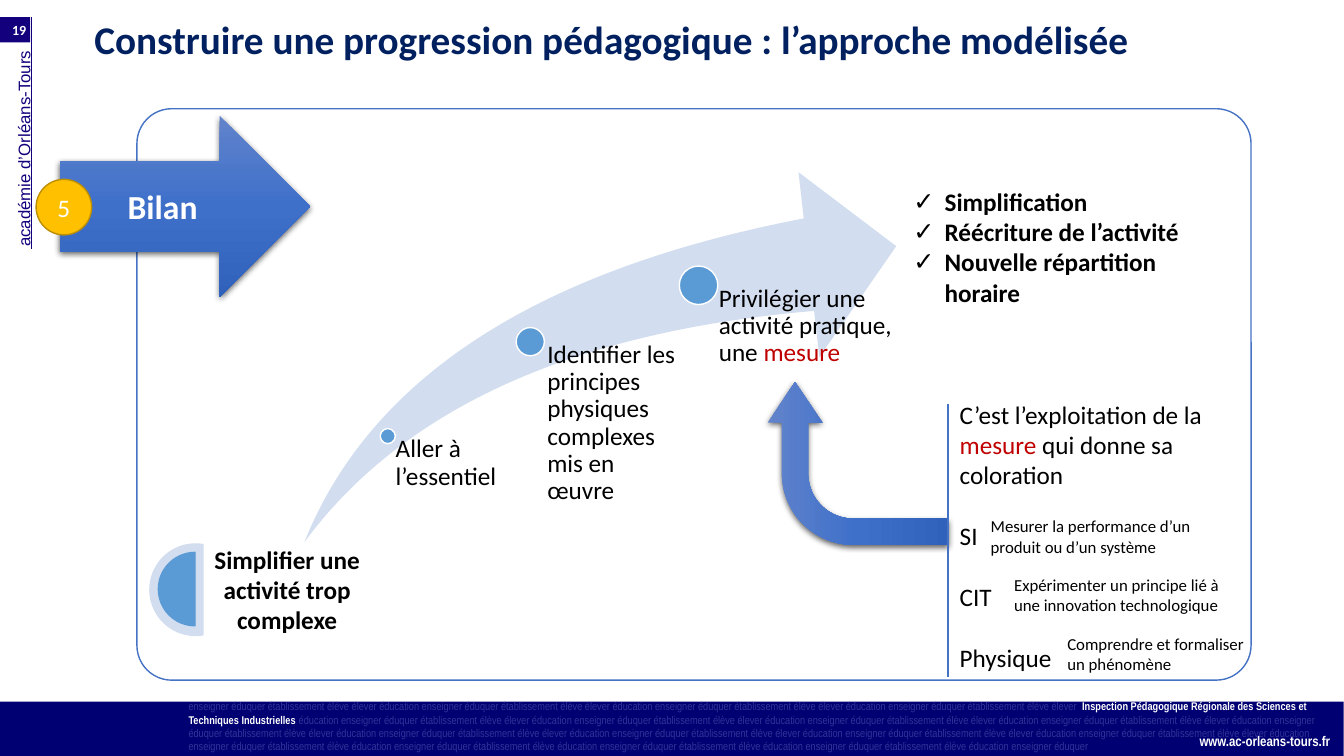
"""Build the slide that sums up the modelled approach to a teaching progression."""
from dataclasses import dataclass

from pptx import Presentation
from pptx import util as u
from pptx.dml.color import RGBColor
from pptx.enum import shapes, text
from pptx.oxml import parse_xml
from pptx.oxml.ns import nsdecls, qn

Kind = shapes.MSO_SHAPE
Align = text.PP_ALIGN


@dataclass(frozen=True)
class Theme:
    """Colours, fonts and type sizes of the slide."""
    navy: str = "000072"
    indigo: str = "13007C"
    faded: str = "333399"
    title: str = "002060"
    blue: str = "4472C4"
    dot: str = "5B9BD5"
    pale: str = "D2DEEF"
    gold: str = "FFC000"
    gold_edge: str = "BD8E00"
    red: str = "C00000"
    black: str = "000000"
    white: str = "FFFFFF"
    gradient: tuple = ((0, "6183CB"), (50, "3E70CA"), (100, "3062BB"))
    body_font: str = "Calibri"
    narrow_font: str = "Arial Narrow"
    side_font: str = "Arial"
    title_size: int = 28
    arrow_size: int = 24
    body_size: int = 18
    note_size: int = 12
    small_size: int = 10
    footer_size: int = 8


def write(shape, *paragraphs, size=18, color="000000", font="Calibri", bold=False,
          align=Align.LEFT, accent=None, accent_bold=False, spacing=None,
          before=0, bullet=None):
    """Write paragraphs in a shape; words between asterisks take the accent colour."""
    frame = shape.text_frame
    for index, content in enumerate(paragraphs):
        paragraph = frame.add_paragraph() if index else frame.paragraphs[0]
        if bullet:
            properties = paragraph._p.get_or_add_pPr()
            properties.set("marL", str(u.Cm(0.79)))
            properties.set("indent", str(-u.Cm(0.79)))
            properties.append(parse_xml(f'<a:buFont {nsdecls("a")} typeface="Arial"/>'))
            properties.append(parse_xml(f'<a:buChar {nsdecls("a")} char="{bullet}"/>'))
        paragraph.alignment = align
        if spacing:
            paragraph.line_spacing = spacing
        if index and before:
            paragraph.space_before = u.Pt(before)
        for part, words in enumerate(content.split("*")):
            accented = part % 2 == 1
            for row, line in enumerate(words.split("\n")):
                if row:
                    paragraph.add_line_break()
                if not line:
                    continue
                run = paragraph.add_run()
                run.text = line
                run.font.name = font
                run.font.size = u.Pt(size)
                run.font.bold = accent_bold if accented else bold
                run.font.color.rgb = RGBColor.from_string(accent if accented else color)


class SlideBuilder:
    """Hold the theme and the current slide, and draw each kind of element."""

    def __init__(self, slide, theme):
        self.slide = slide
        self.theme = theme

    def shape(self, kind, box, fill=None, line=None, adjustments=(), rotation=0):
        """Add a preset shape with a plain fill and an optional thin outline."""
        shape = self.slide.shapes.add_shape(kind, *map(u.Cm, box))
        shape.shadow.inherit = False
        shape.rotation = rotation
        for index, value in enumerate(adjustments):
            shape.adjustments[index] = value
        if fill:
            shape.fill.solid()
            shape.fill.fore_color.rgb = RGBColor.from_string(fill)
        else:
            shape.fill.background()
        if line:
            shape.line.color.rgb = RGBColor.from_string(line)
            shape.line.width = u.Pt(1)
        else:
            shape.line.fill.background()
        return shape

    def raised_arrow(self, kind, box, **options):
        """Add an arrow with the theme gradient and a soft shadow."""
        shape = self.shape(kind, box, fill=self.theme.blue, **options)
        stops = "".join(f'<a:gs pos="{place * 1000}"><a:srgbClr val="{color}"/></a:gs>'
                        for place, color in self.theme.gradient)
        properties = shape._element.spPr
        properties.replace(properties.find(qn("a:solidFill")), parse_xml(
            f'<a:gradFill {nsdecls("a")} rotWithShape="1"><a:gsLst>{stops}</a:gsLst>'
            '<a:lin ang="5400000" scaled="0"/></a:gradFill>'))
        properties.find(qn("a:effectLst")).append(parse_xml(
            f'<a:outerShdw {nsdecls("a")} blurRad="{u.Pt(4.5)}" dist="{u.Pt(1.5)}" '
            'dir="5400000" algn="ctr" rotWithShape="0"><a:srgbClr val="000000">'
            '<a:alpha val="63000"/></a:srgbClr></a:outerShdw>'))
        return shape

    def label(self, box, *paragraphs, wrap=True, grow=True, insets=None, rotation=0, **style):
        """Add a text box."""
        shape = self.slide.shapes.add_textbox(*map(u.Cm, box))
        shape.rotation = rotation
        frame = shape.text_frame
        frame.word_wrap = wrap
        if grow:
            frame.auto_size = text.MSO_AUTO_SIZE.SHAPE_TO_FIT_TEXT
        if insets:
            (frame.margin_left, frame.margin_top,
             frame.margin_right, frame.margin_bottom) = map(u.Cm, insets)
        write(shape, *paragraphs, **style)
        return shape

    def vertical_line(self, x, top, bottom, color, width):
        """Add a straight vertical line."""
        line = self.slide.shapes.add_connector(
            shapes.MSO_CONNECTOR.STRAIGHT, u.Cm(x), u.Cm(top), u.Cm(x), u.Cm(bottom))
        line.line.color.rgb = RGBColor.from_string(color)
        line.line.width = u.Pt(width)
        line._element.spPr.append(parse_xml(f'<a:effectLst {nsdecls("a")}/>'))


def draw_frame(builder):
    """Draw the footer band, page number and side label."""
    theme = builder.theme
    short = "enseigner éduquer établissement élève "
    cycle = short + "élever éducation "
    builder.shape(Kind.RECTANGLE, (-0.64, 17.68, 34.49, 1.4), theme.navy)
    builder.label(
        (4.5, 17.5, 29.39, 1.63),
        cycle * 3 + short + "élever "
        "*Inspection Pédagogique Régionale des Sciences et Techniques Industrielles *"
        "éducation " + cycle * 9 + (short + "éducation ") * 4 + "enseigner éduquer",
        size=theme.footer_size, color=theme.faded, font=theme.narrow_font,
        accent=theme.white, accent_bold=True)
    builder.label((28.4, 18.34, 5.36, 0.69), "www.ac-orleans-tours.fr", size=theme.small_size,
                  color=theme.white, font=theme.narrow_font, bold=True, align=Align.RIGHT)
    page = builder.shape(Kind.RECTANGLE, (-0.43, 0.43, 1.19, 0.64), theme.indigo)
    page.text_frame.word_wrap = False
    page.text_frame.margin_left = page.text_frame.margin_right = u.Cm(0.1)
    write(page, "19", size=theme.small_size, color=theme.white, bold=True, align=Align.RIGHT)
    builder.vertical_line(0.79, 0.43, 6.27, theme.indigo, 0.75)
    builder.label((-2.69, 3.94, 6.58, 0.76), "académie d’Orléans-Tours", rotation=270,
                  size=theme.note_size, color=theme.indigo, font=theme.side_font,
                  align=Align.RIGHT)


def draw_path(builder):
    """Draw the rising arrow with its start and three steps."""
    theme = builder.theme
    builder.shape(Kind.ROUNDED_RECTANGLE, (3.45, 2.74, 28.07, 14.4), line=theme.blue,
                  adjustments=(0.061,))
    builder.shape(Kind.SWOOSH_ARROW, (7.67, 4.34, 14.91, 9.32), theme.pale,
                  adjustments=(0.25, 0.25))
    steps = (
        (9.77, 10.99, 0.38, 3.48, 0.2, "Aller à l’essentiel"),
        (13.36, 8.61, 0.71, 3.68, 0.43,
         "Identifier les principes physiques complexes mis en œuvre"),
        (17.6, 7.19, 0.97, 5.08, 0.51, "Privilégier une activité pratique,\nune *mesure*"),
    )
    for x, y, size, width, inset, words in steps:
        builder.shape(Kind.OVAL, (x - size / 2, y - size / 2, size, size), theme.dot, theme.white)
        builder.label((x, y, width, 13.66 - y), words, grow=False, insets=(inset, 0, 0, 0),
                      size=theme.body_size, accent=theme.red, spacing=0.9)
    builder.label((4.24, 13.59, 5.99, 2.57), "Simplifier une activité trop complexe",
                  size=theme.body_size, bold=True, align=Align.CENTER)
    builder.shape(Kind.CHORD, (3.76, 13.69, 2.34, 2.34), theme.pale, adjustments=(48, 168))
    builder.shape(Kind.PIE, (3.99, 13.92, 1.85, 1.85), theme.dot, theme.dot,
                  adjustments=(54, 162))


def draw_results(builder):
    """Draw the outcome list, the subject notes and the heading arrow."""
    theme = builder.theme
    builder.raised_arrow(Kind.BENT_ARROW, (19.56, 9.4, 4.11, 4.55), rotation=270,
                         adjustments=(0.161, 0.168, 0.25, 0.438))
    builder.label((22.76, 4.57, 7.32, 3.33), "Simplification", "Réécriture de l’activité",
                  "Nouvelle répartition horaire", size=theme.body_size, bold=True, bullet="✓")
    builder.label((23.93, 9.93, 7.62, 7.19),
                  "C’est l’exploitation de la *mesure* qui donne sa coloration",
                  "SI", "CIT", "Physique", size=theme.body_size, accent=theme.red, before=22)
    notes = (
        (24.71, 5.97, "Mesurer la performance d’un produit ou d’un système"),
        (25.3, 5.69, "Expérimenter un principe lié à une innovation technologique"),
        (26.64, 5.13, "Comprendre et formaliser un phénomène"),
    )
    for index, (left, width, words) in enumerate(notes):
        builder.label((left, 12.88 + 1.48 * index, width, 1.27), words, size=theme.note_size)
    builder.vertical_line(23.88, 10.19, 17.07, theme.blue, 1.5)
    heading = builder.raised_arrow(Kind.RIGHT_ARROW, (1.52, 2.92, 6.3, 4.57))
    write(heading, "Bilan", size=theme.arrow_size, color=theme.white, bold=True,
          align=Align.CENTER)
    number = builder.shape(Kind.OVAL, (0.91, 4.52, 1.4, 1.4), theme.gold, theme.gold_edge)
    write(number, "5", size=theme.body_size, color=theme.white, align=Align.CENTER)
    builder.label((2.13, 0.25, 26.85, 1.45),
                  "Construire une progression pédagogique : l’approche modélisée",
                  wrap=False, size=theme.title_size, color=theme.title, bold=True)


def main():
    """Create the presentation and save it."""
    presentation = Presentation()
    presentation.slide_width, presentation.slide_height = u.Cm(33.86), u.Cm(19.05)
    slide = presentation.slides.add_slide(presentation.slide_layouts[6])
    builder = SlideBuilder(slide, Theme())
    draw_frame(builder)
    draw_path(builder)
    draw_results(builder)
    presentation.save("out.pptx")


if __name__ == "__main__":
    main()
